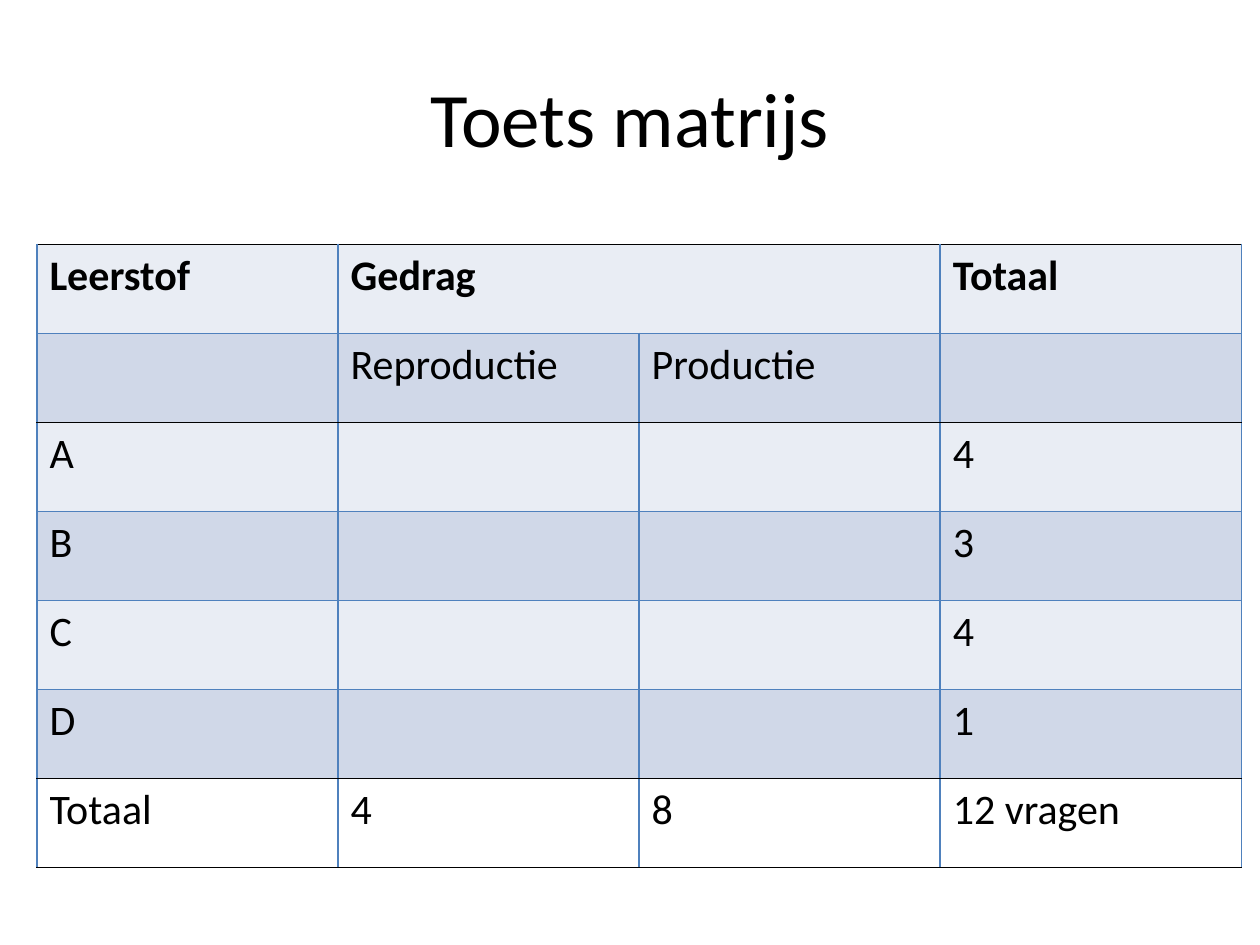
from pptx import Presentation
from pptx.dml.color import RGBColor
from pptx.enum.text import MSO_ANCHOR, PP_ALIGN
from pptx.oxml.ns import qn
from pptx.util import Pt
from lxml import etree

CENTER = PP_ALIGN.CENTER
MIDDLE = MSO_ANCHOR.MIDDLE
COLORS = {"text": "000000", "grid": "4F81BD", "rule": "000000",
          "light": "E9EDF4", "dark": "D0D8E8", "total": "FFFFFF"}
ROWS = [
    ["Leerstof", "Gedrag", "", "Totaal"],
    ["", "Reproductie", "Productie", ""],
    ["A", "", "", "4"],
    ["B", "", "", "3"],
    ["C", "", "", "4"],
    ["D", "", "", "1"],
    ["Totaal", "4", "8", "12 vragen"],
]
RULES = {0, 2, 6, 7}  # horizontal lines drawn in black, counted from the top
COL_W, ROW_H = 172.08, 50.91


def set_font(p, size, bold=False):
    p.font.name = "Calibri"
    p.font.size = Pt(size)
    p.font.bold = bold
    p.font.color.rgb = RGBColor.from_string(COLORS["text"])


def add_border(cell, side, color):
    ln = etree.SubElement(cell._tc.get_or_add_tcPr(), qn("a:ln" + side), w=str(Pt(1)))
    fill = etree.SubElement(ln, qn("a:solidFill"))
    etree.SubElement(fill, qn("a:srgbClr"), val=COLORS[color])


prs = Presentation()
prs.slide_width, prs.slide_height = Pt(720), Pt(540)
s = prs.slides.add_slide(prs.slide_layouts[6])

# Title
tf = s.shapes.add_textbox(Pt(36), Pt(21.6), Pt(648), Pt(90)).text_frame
tf.word_wrap = True
tf.vertical_anchor = MIDDLE
p = tf.paragraphs[0]
p.text = "Toets matrijs"
p.alignment = CENTER
set_font(p, 44)

# Test matrix
n_rows, n_cols = len(ROWS), len(ROWS[0])
table = s.shapes.add_table(n_rows, n_cols, Pt(21.1), Pt(139.6),
                           Pt(COL_W * n_cols), Pt(ROW_H * n_rows)).table
for col in table.columns:
    col.width = Pt(COL_W)
for i, texts in enumerate(ROWS):
    table.rows[i].height = Pt(ROW_H)
    band = "total" if i == n_rows - 1 else ("light", "dark")[i % 2]
    for j, text in enumerate(texts):
        cell = table.cell(i, j)
        for side, color in (("L", "grid"), ("R", "grid"),
                            ("T", "rule" if i in RULES else "grid"),
                            ("B", "rule" if i + 1 in RULES else "grid")):
            add_border(cell, side, color)
        cell.fill.solid()
        cell.fill.fore_color.rgb = RGBColor.from_string(COLORS[band])
        p = cell.text_frame.paragraphs[0]
        p.text = text
        set_font(p, 24, bold=i == 0)

# "Gedrag" spans both behaviour columns
table.cell(0, 1).merge(table.cell(0, 2))

prs.save("out.pptx")
